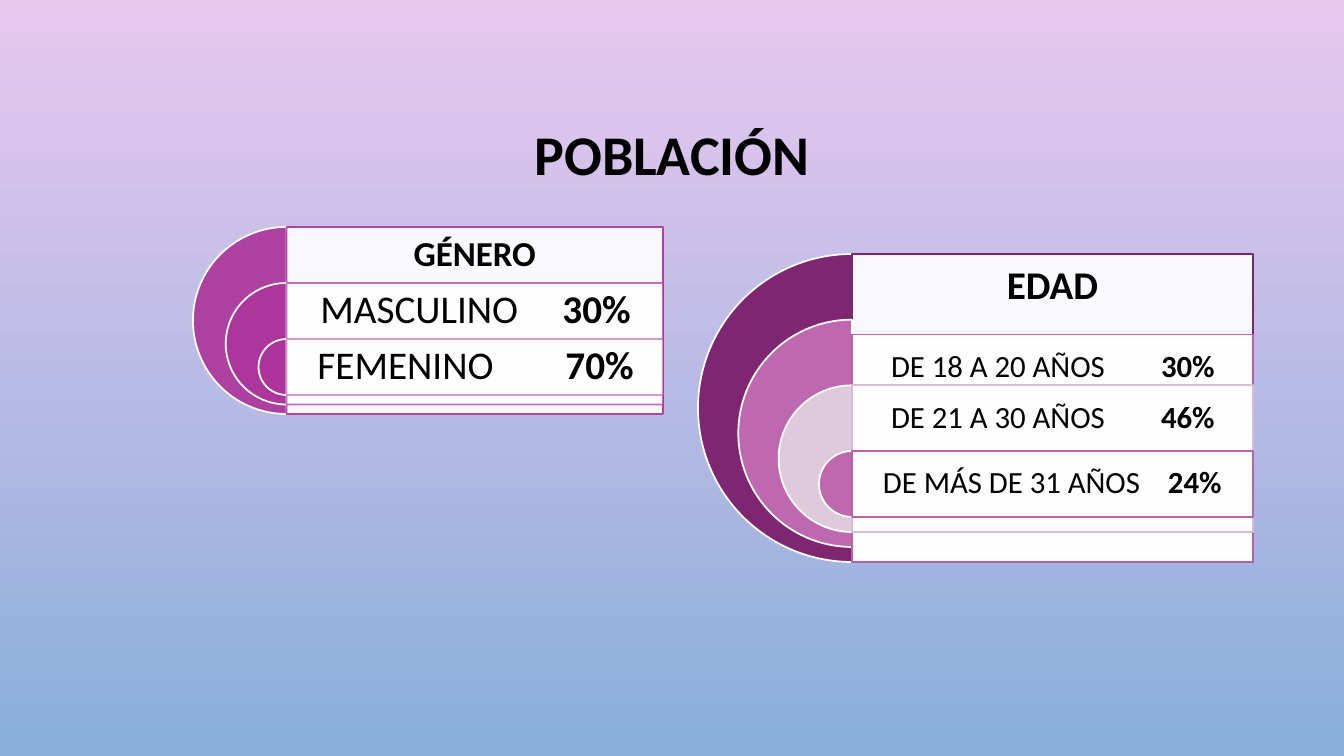
from dataclasses import dataclass

from lxml.etree import SubElement
from pptx import Presentation
from pptx.dml.color import RGBColor
from pptx.enum.shapes import MSO_SHAPE
from pptx.enum.text import MSO_ANCHOR, PP_ALIGN
from pptx.oxml.ns import qn
from pptx.util import Pt

EMU_PER_PX = 914400 / 100.8


@dataclass(frozen=True)
class Theme:
    font: str = "Calibri"
    ink: str = "000000"
    white: str = "FFFFFF"
    sky_top: str = "E9C8EF"
    sky_bottom: str = "89AEDB"
    magenta: str = "AC339A"
    plum: str = "7F2672"
    orchid: str = "BE69AF"
    orchid_edge: str = "BB60AB"
    mauve: str = "DFCADB"
    mauve_edge: str = "D7BBD1"
    title: int = 40
    gender_heading: int = 25
    gender_row: int = 28
    age_heading: int = 28
    age_row: int = 22
    edge: float = 1.25
    panel_opacity: int = 90


THEME = Theme()


@dataclass(frozen=True)
class Ring:
    label: str
    value: str
    size: int
    fill: str
    edge: str
    opacity: int = 100
    indent: int = 0
    tab: int = 0
    drop: int = 0


def px(length):
    return round(length * EMU_PER_PX)


def paint(color_format, color, opacity=100):
    color_format.fore_color.rgb = RGBColor.from_string(color)
    if opacity < 100:
        node = color_format._xPr.find(qn("a:solidFill"))[0]
        SubElement(node, qn("a:alpha"), val=str(opacity * 1000))


def add_block(slide, preset, box, fill, fill_opacity, edge, edge_opacity=100):
    block = slide.shapes.add_shape(preset, *map(px, box))
    block.shadow.inherit = False
    block.fill.solid()
    paint(block.fill, fill, fill_opacity)
    block.line.width = Pt(THEME.edge)
    block.line.fill.solid()
    paint(block.line.fill, edge, edge_opacity)
    return block


def add_label(slide, box, runs, size, indent=0, tab=0):
    label = slide.shapes.add_textbox(*map(px, box))
    frame = label.text_frame
    frame.word_wrap = True
    frame.vertical_anchor = MSO_ANCHOR.MIDDLE
    frame.margin_left = px(indent)
    frame.margin_right = frame.margin_top = frame.margin_bottom = 0
    paragraph = frame.paragraphs[0]
    paragraph.alignment = PP_ALIGN.LEFT if tab else PP_ALIGN.CENTER
    paragraph.line_spacing = 0.9
    if tab:
        stops = SubElement(paragraph._p.get_or_add_pPr(), qn("a:tabLst"))
        SubElement(stops, qn("a:tab"), pos=str(px(tab)), algn="l")
    for text, bold in runs:
        run = paragraph.add_run()
        run.text = text
        run.font.name = THEME.font
        run.font.size = Pt(size)
        run.font.bold = bold
        run.font.color.rgb = RGBColor.from_string(THEME.ink)


def add_target_list(slide, box, last_offset, band, rings):
    left, top, width, outer = box
    steps = len(rings) - 1
    axis = left + outer / 2
    panel_width = width - outer / 2
    for index, ring in enumerate(rings):
        diameter = outer + (band - outer) * index / steps
        ring_top = top + last_offset * index / steps
        panel_top = ring_top + ring.drop
        half_disc = add_block(
            slide, MSO_SHAPE.PIE,
            (axis - diameter / 2, ring_top, diameter, diameter),
            ring.fill, ring.opacity, THEME.white)
        half_disc.adjustments[0] = 54
        half_disc.adjustments[1] = 162
        add_block(slide, MSO_SHAPE.RECTANGLE,
                  (axis, panel_top, panel_width, diameter),
                  THEME.white, THEME.panel_opacity, ring.edge, ring.opacity)
        runs = [(ring.label, True)]
        if ring.value:
            runs = [(ring.label + "\t", False), (ring.value, True)]
        add_label(slide, (axis, panel_top, panel_width, band),
                  runs, ring.size, ring.indent, ring.tab)


def add_background(slide):
    fill = slide.background.fill
    fill.gradient()
    fill.gradient_angle = 270
    colors = (THEME.sky_top, THEME.sky_bottom)
    for position, (stop, color) in enumerate(zip(fill.gradient_stops, colors)):
        stop.position = position
        stop.color.rgb = RGBColor.from_string(color)


def add_title(slide, box):
    add_label(slide, box, [("POBLACIÓN", True)], THEME.title)


def add_gender(slide, box):
    color, size = THEME.magenta, THEME.gender_row
    add_target_list(slide, box, 112, 56, [
        Ring("GÉNERO", "", THEME.gender_heading, color, color, 90),
        Ring("MASCULINO", "30%", size, color, color, 70, 34, 242),
        Ring("FEMENINO", "70%", size, color, color, 50, 31, 248),
    ])


def add_age(slide, box):
    size = THEME.age_row
    add_target_list(slide, box, 197, 66, [
        Ring("EDAD", "", THEME.age_heading, THEME.plum, THEME.plum),
        Ring("DE 18 A 20 AÑOS", "30%", size, THEME.orchid, THEME.orchid_edge,
             indent=39, tab=270, drop=15),
        Ring("DE 21 A 30 AÑOS", "46%", size, THEME.mauve, THEME.mauve_edge,
             indent=39, tab=270),
        Ring("DE MÁS DE 31 AÑOS", "24%", size, THEME.orchid,
             THEME.orchid_edge, indent=31, tab=285),
    ])


def main():
    deck = Presentation()
    deck.slide_width, deck.slide_height = px(1344), px(756)
    slide = deck.slides.add_slide(deck.slide_layouts[6])
    add_background(slide)
    add_title(slide, (101, 69, 1142, 176))
    add_gender(slide, (193, 227, 470, 187))
    add_age(slide, (698, 254, 555, 308))
    deck.save("out.pptx")


if __name__ == "__main__":
    main()
